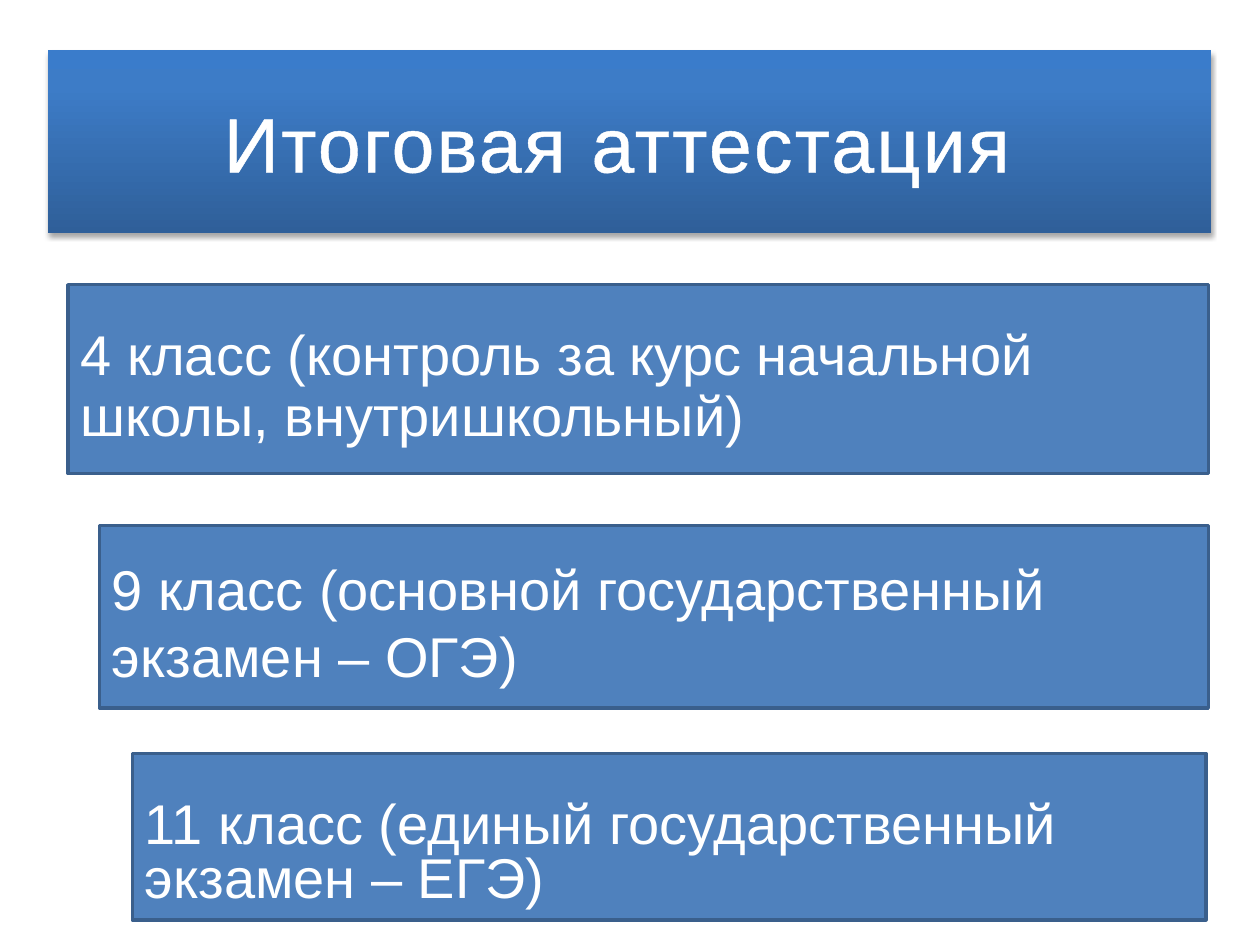
from dataclasses import dataclass

from lxml.etree import _Element
from pptx import Presentation
from pptx.dml.color import RGBColor
from pptx.enum.shapes import MSO_SHAPE
from pptx.enum.text import MSO_ANCHOR, PP_ALIGN
from pptx.oxml import parse_xml
from pptx.oxml.ns import nsdecls
from pptx.slide import Slide
from pptx.util import Inches, Pt

FONT = "Arial"
COLORS = {
    "text": "FFFFFF",
    "panel": "4F81BD",
    "border": "3A5F8C",
    "title_bottom": "2F5F99",
    "title_middle": "3D7CC7",
    "title_top": "3A7CCB",
    "shadow": "000000",
}
TITLE_STOPS = ((0, "title_bottom"), (80, "title_middle"), (100, "title_top"))


@dataclass(frozen=True)
class Exam:
    text: str
    left: float
    top: float
    width: float
    height: float
    top_inset: float
    line_spacing: float


EXAMS = (
    Exam("4 класс (контроль за курс начальной школы, внутришкольный)",
         0.54, 2.26, 9.05, 1.5, 0.34, 0.9),
    Exam("9 класс (основной государственный экзамен – ОГЭ)",
         0.79, 4.17, 8.8, 1.45, 0.23, 1.0),
    Exam("11 класс (единый государственный экзамен – ЕГЭ)",
         1.05, 5.98, 8.52, 1.32, 0.38, 0.8),
)


def color(name: str) -> RGBColor:
    return RGBColor.from_string(COLORS[name])


def place(shape, left: float, top: float, width: float, height: float) -> None:
    shape.left, shape.top = Inches(left), Inches(top)
    shape.width, shape.height = Inches(width), Inches(height)


def write(paragraph, text: str, size: int):
    run = paragraph.add_run()
    run.text = text
    run.font.name = FONT
    run.font.size = Pt(size)
    run.font.color.rgb = color("text")
    return run


def title_gradient() -> _Element:
    stops = "".join(
        f'<a:gs pos="{percent * 1000}"><a:srgbClr val="{COLORS[name]}"/></a:gs>'
        for percent, name in TITLE_STOPS
    )
    return parse_xml(
        f'<a:gradFill {nsdecls("a")} rotWithShape="1"><a:gsLst>{stops}</a:gsLst>'
        '<a:lin ang="16200000" scaled="0"/></a:gradFill>'
    )


def title_shadow() -> _Element:
    return parse_xml(
        f'<a:effectLst {nsdecls("a")}>'
        f'<a:outerShdw blurRad="{Pt(3.1)}" dist="{Pt(1.8)}" dir="5400000" rotWithShape="0">'
        f'<a:srgbClr val="{COLORS["shadow"]}"><a:alpha val="35000"/></a:srgbClr>'
        '</a:outerShdw></a:effectLst>'
    )


def text_outline() -> _Element:
    return parse_xml(
        f'<a:ln {nsdecls("a")} w="{Pt(1.45)}"><a:solidFill>'
        f'<a:srgbClr val="{COLORS["text"]}"/></a:solidFill></a:ln>'
    )


def draw_title(slide: Slide, text: str) -> None:
    title = slide.shapes.title
    place(title, 0.38, 0.4, 9.23, 1.45)
    title._element.spPr.append(title_gradient())
    title._element.spPr.append(title_shadow())
    title.text_frame.vertical_anchor = MSO_ANCHOR.MIDDLE
    heading = title.text_frame.paragraphs[0]
    heading.alignment = PP_ALIGN.CENTER
    run = write(heading, text, 44)
    properties = run._r.get_or_add_rPr()
    properties.set("spc", "130")
    properties.insert(0, text_outline())


def draw_exam(slide: Slide, exam: Exam) -> None:
    panel = slide.shapes.add_shape(
        MSO_SHAPE.RECTANGLE, Inches(exam.left), Inches(exam.top),
        Inches(exam.width), Inches(exam.height),
    )
    panel.shadow.inherit = False
    panel.fill.solid()
    panel.fill.fore_color.rgb = color("panel")
    panel.line.color.rgb = color("border")
    panel.line.width = Pt(2)
    frame = panel.text_frame
    frame.word_wrap = True
    frame.vertical_anchor = MSO_ANCHOR.TOP
    frame.margin_top = Inches(exam.top_inset)
    paragraph = frame.paragraphs[0]
    paragraph.alignment = PP_ALIGN.LEFT
    paragraph.line_spacing = exam.line_spacing
    write(paragraph, exam.text, 32)


def main() -> None:
    presentation = Presentation()
    presentation.slide_width = Inches(10)
    presentation.slide_height = Inches(7.5)
    slide = presentation.slides.add_slide(presentation.slide_layouts[5])
    draw_title(slide, "Итоговая аттестация ")
    for exam in EXAMS:
        draw_exam(slide, exam)
    presentation.save("out.pptx")


if __name__ == "__main__":
    main()
